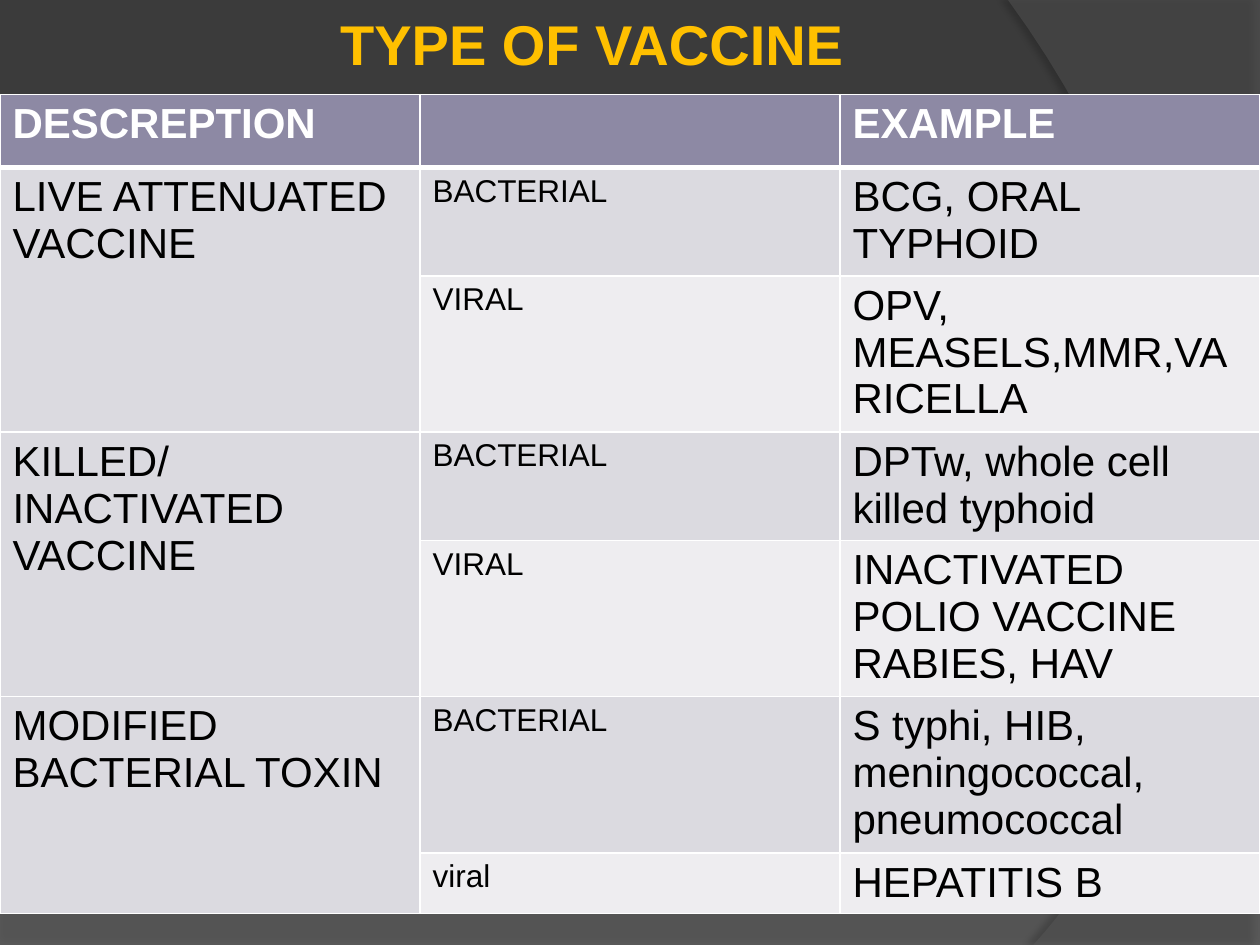
from dataclasses import dataclass

from lxml.etree import SubElement
from pptx import Presentation
from pptx.dml.color import RGBColor
from pptx.oxml.ns import qn
from pptx.util import Inches, Pt


@dataclass(frozen=True)
class Theme:
    """Colours, font and type sizes of the slide."""
    font: str = "Arial"
    background: str = "3B3B3B"
    wave: str = "7F7F7F"
    ribbon: str = "5E5E5E"
    title: str = "FFC000"
    header: str = "8D89A4"
    bands: tuple = ("DBDAE0", "EEEDF0")
    light: str = "FFFFFF"
    dark: str = "000000"
    title_size: int = 32
    large: int = 24
    small: int = 18


def curve(start, first, second, end, steps=40):
    """Return points along a cubic curve, after its start."""
    def point(t):
        weights = ((1 - t) ** 3, 3 * t * (1 - t) ** 2, 3 * t * t * (1 - t), t ** 3)
        corners = (start, first, second, end)
        return tuple(sum(w * c[axis] for w, c in zip(weights, corners)) for axis in (0, 1))
    return [point(step / steps) for step in range(1, steps + 1)]


class SlideBuilder:
    """Draws styled elements, with lengths as shares of the slide's size."""

    def __init__(self, presentation, theme):
        """Add a blank slide with the theme's background."""
        self.theme = theme
        self.width, self.height = presentation.slide_width, presentation.slide_height
        self.slide = presentation.slides.add_slide(presentation.slide_layouts[6])
        self.paint(self.slide.background.fill, theme.background)

    def paint(self, fill, color):
        """Make a fill solid."""
        fill.solid()
        fill.fore_color.rgb = RGBColor.from_string(color)

    def box(self, left, top, width, height):
        """Turn shares into slide lengths."""
        return (round(left * self.width), round(top * self.height),
                round(width * self.width), round(height * self.height))

    def add_text(self, paragraph, text, size, color, bold=False):
        """Add one styled run."""
        run = paragraph.add_run()
        run.text = text
        run.font.name, run.font.size, run.font.bold = self.theme.font, Pt(size), bold
        run.font.color.rgb = RGBColor.from_string(color)

    def outline(self, points, color, opacity, shadow_opacity, distance, degrees):
        """Draw a translucent closed outline with a soft shadow."""
        places = [self.box(x, y, 0, 0)[:2] for x, y in points]
        builder = self.slide.shapes.build_freeform(*places[0])
        builder.add_line_segments(places[1:], close=True)
        shape = builder.convert_to_shape()
        self.paint(shape.fill, color)
        shape.line.fill.background()
        shape.shadow.inherit = False
        properties = shape._element.spPr
        tint = properties.find(qn("a:solidFill"))[0]
        SubElement(tint, qn("a:alpha"), val=str(opacity * 1000))
        effects = properties.find(qn("a:effectLst"))
        shadow = SubElement(effects, qn("a:outerShdw"), blurRad=str(Pt(4)),
                            dist=str(Pt(distance)), dir=str(degrees * 60000))
        shade = SubElement(shadow, qn("a:srgbClr"), val=self.theme.dark)
        SubElement(shade, qn("a:alpha"), val=str(shadow_opacity * 1000))

    def title(self, text, left, top, width, height):
        """Place the heading without insets."""
        frame = self.slide.shapes.add_textbox(*self.box(left, top, width, height)).text_frame
        frame.word_wrap = True
        frame.margin_left = frame.margin_top = frame.margin_right = frame.margin_bottom = 0
        self.add_text(frame.paragraphs[0], text, self.theme.title_size, self.theme.title, True)

    def borders(self, cell, top, bottom):
        """Rule the four sides of a cell."""
        properties = cell._tc.get_or_add_tcPr()
        for side, points in (("L", 1), ("R", 1), ("T", top), ("B", bottom)):
            line = SubElement(properties, qn(f"a:ln{side}"), w=str(Pt(points)))
            fill = SubElement(line, qn("a:solidFill"))
            SubElement(fill, qn("a:srgbClr"), val=self.theme.light)

    def table(self, rows, heights, top):
        """Fill a full-width table; a None cell joins the one above."""
        theme, columns = self.theme, len(rows[0])
        area = self.box(0, top, 1, sum(heights))
        table = self.slide.shapes.add_table(len(rows), columns, *area).table
        for row, height in zip(table.rows, heights):
            row.height = round(height * self.height)
        for r, row in enumerate(rows):
            for c, text in enumerate(row):
                cell = table.cell(r, c)
                self.borders(cell, 3 if r == 1 else 1, 3 if r == 0 else 1)
                self.paint(cell.fill, theme.bands[(r - 1) % 2] if r else theme.header)
                if text:
                    size = theme.small if r and c == 1 else theme.large
                    color = theme.dark if r else theme.light
                    self.add_text(cell.text_frame.paragraphs[0], text, size, color, r == 0)
                elif text is None:
                    table.cell(r - 1, c).merge(cell)


ROWS = [
    ("DESCREPTION", "", "EXAMPLE"),
    ("LIVE ATTENUATED VACCINE", "BACTERIAL", "BCG, ORAL TYPHOID"),
    (None, "VIRAL", "OPV, MEASELS,MMR,VARICELLA"),
    ("KILLED/INACTIVATED VACCINE", "BACTERIAL", "DPTw, whole cell killed typhoid"),
    (None, "VIRAL", "INACTIVATED POLIO VACCINE RABIES, HAV"),
    ("MODIFIED BACTERIAL TOXIN", "BACTERIAL", "S typhi, HIB, meningococcal, pneumococcal"),
    (None, "viral", "HEPATITIS B"),
]
HEIGHTS = [inches / 7.5 for inches in (0.58, 0.86, 1.24, 0.86, 1.24, 1.24, 0.48)]


def main():
    """Build and save the slide."""
    presentation = Presentation()
    presentation.slide_width, presentation.slide_height = Inches(10), Inches(7.5)
    theme = Theme()
    builder = SlideBuilder(presentation, theme)
    wave = [(0, 0.94), (0, 1), (1, 1), (1, 0.69)]
    wave += curve(wave[-1], (0.56, 0.97), (0.39, 0.96), wave[0])
    ribbon = [(1, 0), (1, 1), (0.82, 1)]
    ribbon += curve(ribbon[-1], (0.94, 0.83), (1.02, 0.4), (0.8, 0))
    builder.outline(wave, theme.wave, 45, 35, 3.5, 270)
    builder.outline(ribbon, theme.ribbon, 40, 45, 4, 180)
    builder.table(ROWS, HEIGHTS, 0.1)
    builder.title("TYPE OF VACCINE", 0.27, 0.01, 0.73, 0.09)
    presentation.save("out.pptx")


if __name__ == "__main__":
    main()
